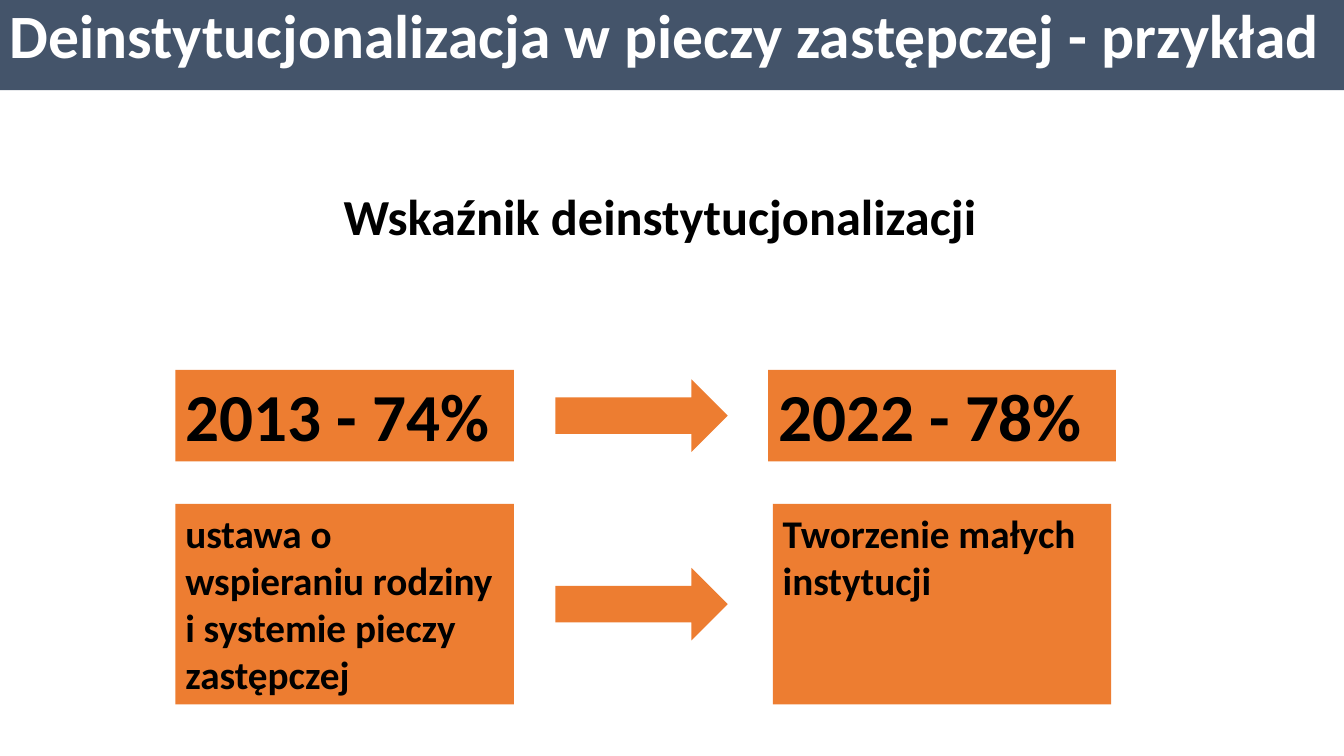
import dataclasses

import pptx
import pptx.dml.color
import pptx.enum.shapes
import pptx.enum.text
import pptx.util

Cm = pptx.util.Cm
Shapes = pptx.enum.shapes.MSO_SHAPE
AutoSize = pptx.enum.text.MSO_AUTO_SIZE


@dataclasses.dataclass(frozen=True)
class Theme:
    """Colours, font and type sizes of the slide."""
    font: str = "Calibri"
    banner: str = "44546A"
    accent: str = "ED7D31"
    light: str = "FFFFFF"
    dark: str = "000000"
    title_size: int = 44
    heading_size: int = 36
    figure_size: int = 48
    note_size: int = 28


THEME = Theme()
SLIDE_WIDTH, SLIDE_HEIGHT = 33.87, 19.05
LEFT_COLUMN, COLUMN_WIDTH = 4.42, 8.53
RIGHT_CENTRE = 23.74
ARROW_LEFT, ARROW_WIDTH, ARROW_HEIGHT = 14, 4.34, 1.83


def colour(value):
    """Return an RGB colour from its hex value."""
    return pptx.dml.color.RGBColor.from_string(value)


def add_block(page, kind, area, fill):
    """Add a flat filled shape without outline or shadow."""
    block = page.shapes.add_shape(kind, *map(Cm, area))
    block.shadow.inherit = False
    block.fill.solid()
    block.fill.fore_color.rgb = colour(fill)
    block.line.fill.background()
    return block


def write_text(box, text, size, ink=THEME.dark, fit=AutoSize.SHAPE_TO_FIT_TEXT, spacing=None):
    """Write one bold, left-aligned paragraph at the top of a box."""
    frame = box.text_frame
    frame_format = {
        "word_wrap": True,
        "auto_size": fit,
        "vertical_anchor": pptx.enum.text.MSO_ANCHOR.TOP,
    }
    for name, value in frame_format.items():
        setattr(frame, name, value)
    para = frame.paragraphs[0]
    para.alignment = pptx.enum.text.PP_ALIGN.LEFT
    para.line_spacing = spacing
    span = para.add_run()
    span.text = text
    span_format = {"name": THEME.font, "size": pptx.util.Pt(size), "bold": True}
    for name, value in span_format.items():
        setattr(span.font, name, value)
    span.font.color.rgb = colour(ink)


def add_title(page, text):
    """Add the full-width banner with the slide title."""
    banner = add_block(page, Shapes.RECTANGLE, (0, 0, SLIDE_WIDTH, 2.27), THEME.banner)
    write_text(banner, text, THEME.title_size, THEME.light, AutoSize.NONE, 0.9)


def add_heading(page, text):
    """Add the heading above the comparison."""
    box = page.shapes.add_textbox(Cm(8.41), Cm(4.55), Cm(17.63), Cm(1.8))
    write_text(box, text, THEME.heading_size)


def add_change(page, top, height, size, before, after, after_width):
    """Add a row of two boxes with an arrow centred between them."""
    boxes = (
        (before, LEFT_COLUMN, COLUMN_WIDTH),
        (after, RIGHT_CENTRE - after_width / 2, after_width),
    )
    for text, left, width in boxes:
        box = add_block(page, Shapes.RECTANGLE, (left, top, width, height), THEME.accent)
        write_text(box, text, size)
    arrow_top = top + (height - ARROW_HEIGHT) / 2
    arrow_area = (ARROW_LEFT, arrow_top, ARROW_WIDTH, ARROW_HEIGHT)
    add_block(page, Shapes.RIGHT_ARROW, arrow_area, THEME.accent)


def main():
    """Build and save the slide."""
    deck = pptx.Presentation()
    deck.slide_width, deck.slide_height = Cm(SLIDE_WIDTH), Cm(SLIDE_HEIGHT)
    page = deck.slides.add_slide(deck.slide_layouts[6])
    add_title(page, "Deinstytucjonalizacja w pieczy zastępczej - przykład")
    add_heading(page, "Wskaźnik deinstytucjonalizacji")
    add_change(page, 9.32, 2.31, THEME.figure_size, "2013 - 74%", "2022 - 78%", 8.76)
    add_change(
        page, 12.7, 5.05, THEME.note_size,
        "ustawa o wspieraniu rodziny i systemie pieczy zastępczej",
        "Tworzenie małych instytucji", COLUMN_WIDTH,
    )
    deck.save("out.pptx")


if __name__ == "__main__":
    main()
